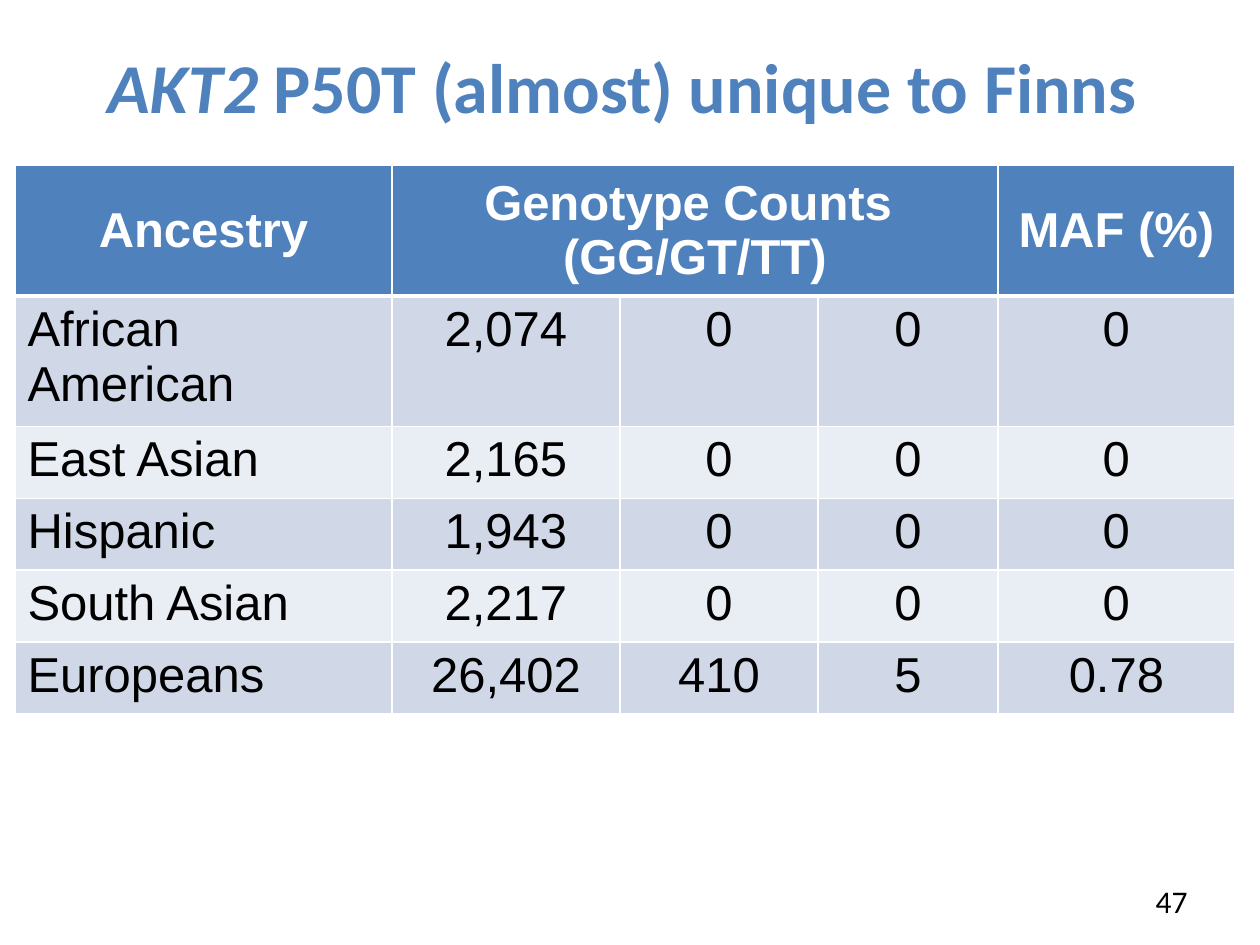
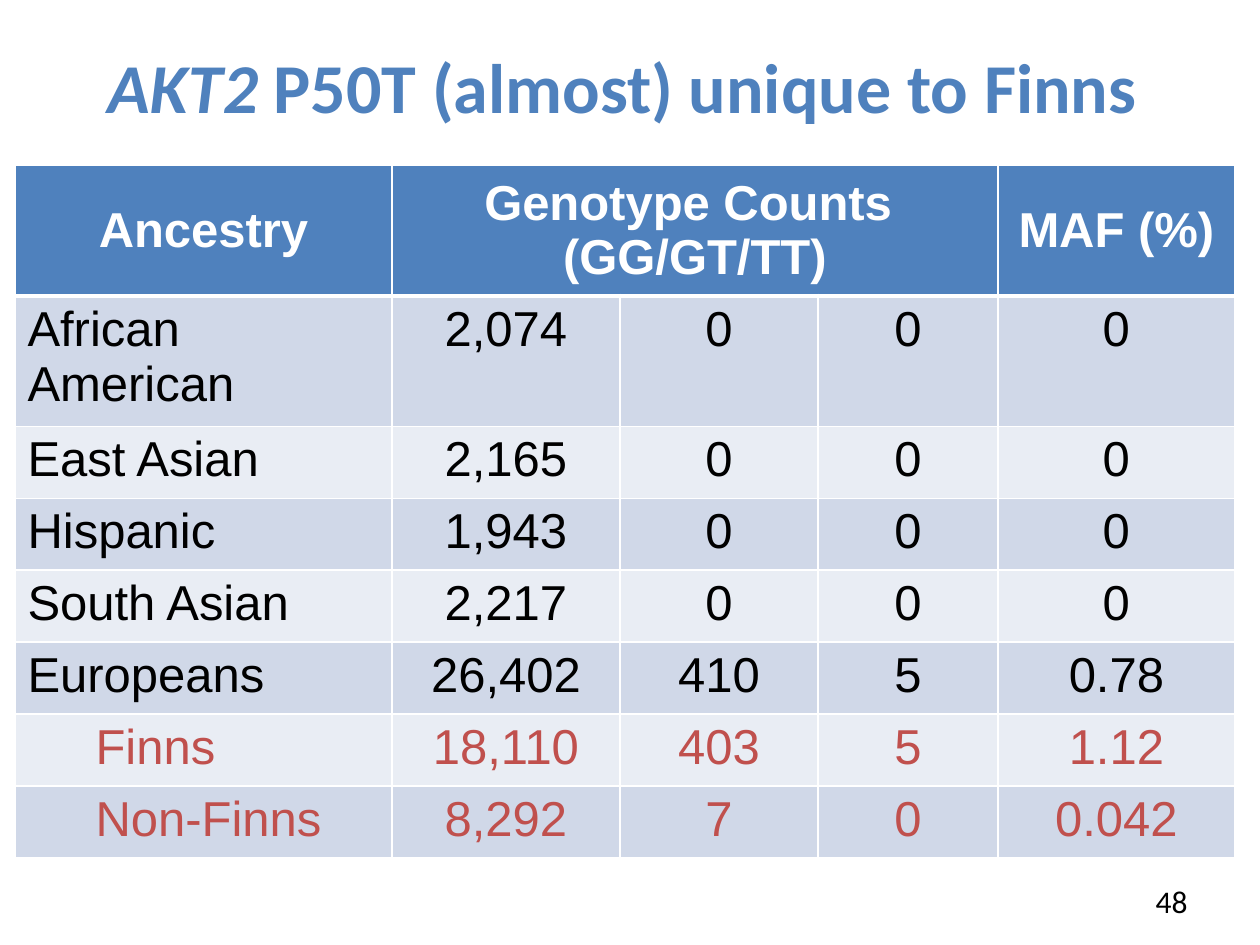
from lxml import etree
from pptx import Presentation
from pptx.dml.color import RGBColor
from pptx.enum.text import MSO_ANCHOR, PP_ALIGN
from pptx.oxml.ns import qn
from pptx.util import Emu, Pt

LEFT, CENTER, RIGHT = PP_ALIGN.LEFT, PP_ALIGN.CENTER, PP_ALIGN.RIGHT
TOP, MIDDLE = MSO_ANCHOR.TOP, MSO_ANCHOR.MIDDLE
TITLE_ONLY = 5

# Content
TITLE = [("AKT2 ", True), ("P50T (almost) unique to Finns ", False)]
HEADER = ["Ancestry", "Genotype Counts \n(GG/GT/TT)", "", "", "MAF (%)"]
ANCESTRIES = [
    ("African American", "2,074", "0", "0", "0"),
    ("East Asian", "2,165", "0", "0", "0"),
    ("Hispanic", "1,943", "0", "0", "0"),
    ("South Asian", "2,217", "0", "0", "0"),
    ("Europeans", "26,402", "410", "5", "0.78"),
]
EUROPEAN_SUBGROUPS = [
    ("Finns", "18,110", "403", "5", "1.12"),
    ("Non-Finns", "8,292", "7", "0", "0.042"),
]
SLIDES = [("47", []), ("48", EUROPEAN_SUBGROUPS)]

# Shared look, lengths in px
SLIDE_SIZE = (1260, 945)
TITLE_BOX = (15, 6, 1230, 158)
NUMBER_BOX = (1011, 876, 189, 50)
TABLE_CORNER = (15, 165)
COLUMNS = [377, 228, 198, 180, 237]
HEADER_HEIGHT, ROW_HEIGHT = 131, 72
SUBGROUP_INDENT = 68
BLUE, RED, WHITE, BLACK = "4F81BD", "C0504D", "FFFFFF", "000000"
BANDS = ["D0D8E8", "E9EDF4"]
TITLE_FONT = {"name": "Calibri", "size": Pt(40), "bold": True}
NUMBER_FONT = {"name": "Calibri", "size": Pt(18)}
HEADER_FONT = {"name": "Arial", "size": Pt(28), "bold": True}
BODY_FONT = {**HEADER_FONT, "bold": False}


def px(length):
    return Emu(round(length * 914400 / 126))


def rgb(hex_color):
    return RGBColor.from_string(hex_color)


def style(font, values, color):
    for key, value in values.items():
        setattr(font, key, value)
    font.color.rgb = rgb(color)


def add_border(cell, side, points):
    line = etree.SubElement(cell._tc.get_or_add_tcPr(), qn("a:ln" + side), w=str(Pt(points)))
    fill = etree.SubElement(line, qn("a:solidFill"))
    etree.SubElement(fill, qn("a:srgbClr"), val=WHITE)


def fill_cell(cell, text, font, color, fill, align, anchor, borders):
    for side, points in borders.items():
        add_border(cell, side, points)
    cell.fill.solid()
    cell.fill.fore_color.rgb = rgb(fill)
    cell.vertical_anchor = anchor
    cell.text = text
    for paragraph in cell.text_frame.paragraphs:
        paragraph.alignment = align
        for run in paragraph.runs:
            style(run.font, font, color)


def add_title(slide):
    title = slide.shapes.title
    title.left, title.top, title.width, title.height = map(px, TITLE_BOX)
    title.text_frame.vertical_anchor = MIDDLE
    paragraph = title.text_frame.paragraphs[0]
    paragraph.alignment = CENTER
    for text, italic in TITLE:
        run = paragraph.add_run()
        run.text = text
        style(run.font, {**TITLE_FONT, "italic": italic}, BLUE)


def add_number(slide, number):
    frame = slide.shapes.add_textbox(*map(px, NUMBER_BOX)).text_frame
    frame.word_wrap = True
    frame.vertical_anchor = MIDDLE
    paragraph = frame.paragraphs[0]
    paragraph.alignment = RIGHT
    run = paragraph.add_run()
    run.text = number
    style(run.font, NUMBER_FONT, BLACK)


def add_genotype_table(slide, subgroups):
    rows = ANCESTRIES + subgroups
    size = (sum(COLUMNS), HEADER_HEIGHT + ROW_HEIGHT * len(rows))
    table = slide.shapes.add_table(
        len(rows) + 1, len(COLUMNS), *map(px, TABLE_CORNER + size)).table
    table.first_row = table.horz_banding = False
    for column, width in zip(table.columns, COLUMNS):
        column.width = px(width)
    for index, row in enumerate(table.rows):
        row.height = px(ROW_HEIGHT if index else HEADER_HEIGHT)

    # Header row
    for col, text in enumerate(HEADER):
        fill_cell(table.cell(0, col), text, HEADER_FONT, WHITE, BLUE, CENTER, MIDDLE,
                  {"L": 1, "R": 1, "T": 1, "B": 3})
    table.cell(0, 1).merge(table.cell(0, 3))

    # Ancestry rows, with the European subgroups indented in red
    for index, values in enumerate(rows):
        is_subgroup = index >= len(ANCESTRIES)
        borders = {"L": 1, "R": 1, "T": 1 if index else 3, "B": 1}
        for col, text in enumerate(values):
            fill_cell(table.cell(index + 1, col), text, BODY_FONT,
                      RED if is_subgroup else BLACK, BANDS[index % 2],
                      CENTER if col else LEFT, TOP, borders)
        if is_subgroup:
            name = table.cell(index + 1, 0).text_frame.paragraphs[0]
            name._p.get_or_add_pPr().set("marL", str(px(SUBGROUP_INDENT)))


def main():
    deck = Presentation()
    deck.slide_width, deck.slide_height = map(px, SLIDE_SIZE)
    for number, subgroups in SLIDES:
        slide = deck.slides.add_slide(deck.slide_layouts[TITLE_ONLY])
        add_title(slide)
        add_number(slide, number)
        add_genotype_table(slide, subgroups)
    deck.save("out.pptx")


if __name__ == "__main__":
    main()
